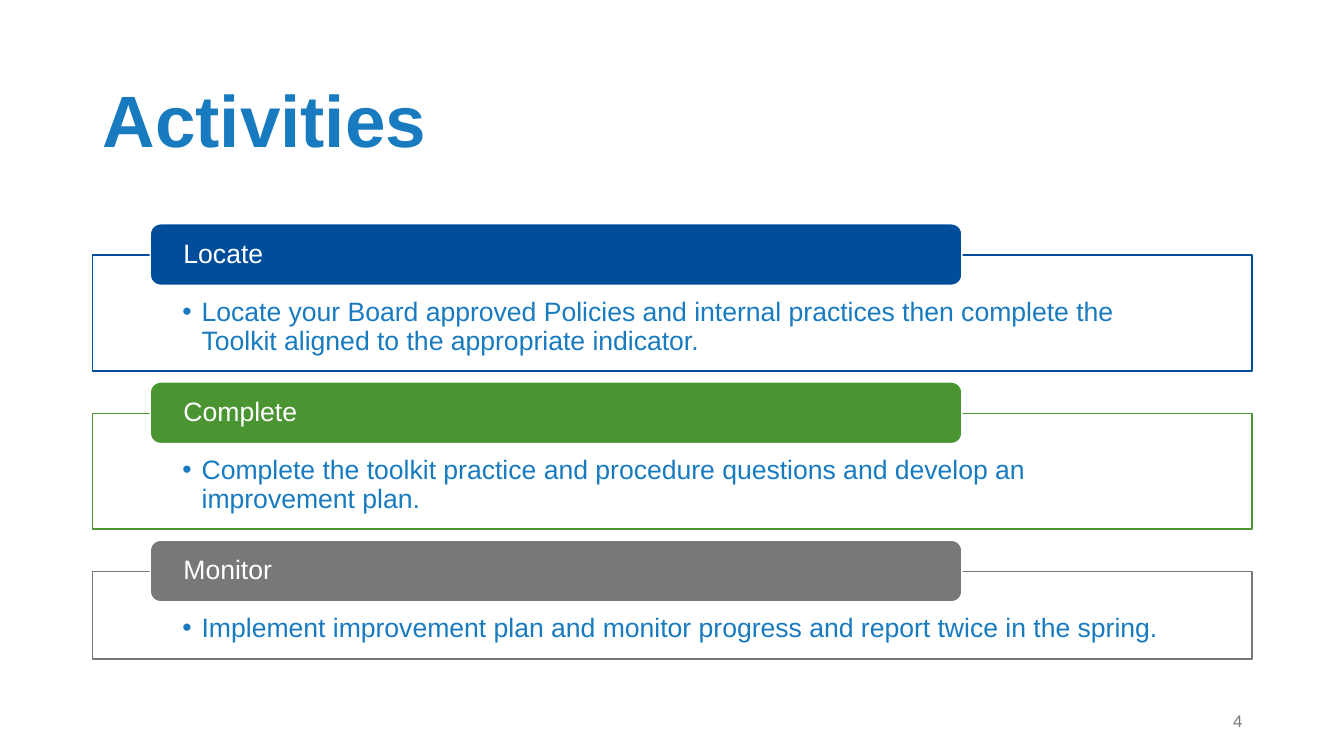
from lxml.etree import SubElement
from pptx import Presentation
from pptx.dml.color import RGBColor
from pptx.enum.shapes import MSO_SHAPE
from pptx.enum.text import MSO_ANCHOR, PP_ALIGN
from pptx.oxml.ns import qn
from pptx.util import Pt

PX = 9144  # EMU per px, 100 px to the inch
FONT = "Arial"
BLUE, GRAY, WHITE = "187BC0", "787878", "FFFFFF"

LEFT, WIDTH = 92, 1150
FIRST_TOP, GAP = 253, 42
BAR_LEFT, BAR_WIDTH, BAR_HEIGHT, BAR_RISE = 149, 805, 61, 31

# heading, detail, color, panel height
ACTIVITIES = [
    ("Locate",
     "Locate your Board approved Policies and internal practices "
     "then complete the Toolkit aligned to the appropriate indicator.",
     "004E9A", 115),
    ("Complete",
     "Complete the toolkit practice and procedure questions "
     "and develop an improvement plan.",
     "4A9431", 115),
    ("Monitor",
     "Implement improvement plan and monitor progress "
     "and report twice in the spring.",
     GRAY, 87),
]


def color(value):
    return RGBColor.from_string(value)


def px(*lengths):
    return [length * PX for length in lengths]


def set_text(sp, text, size, text_color, insets=(10, 5, 10, 5), bold=False,
             align=PP_ALIGN.LEFT, anchor=MSO_ANCHOR.MIDDLE, spacing=0.9):
    tf = sp.text_frame
    tf.word_wrap = True
    tf.vertical_anchor = anchor
    (tf.margin_left, tf.margin_top,
     tf.margin_right, tf.margin_bottom) = px(*insets)
    tf.text = text
    p = tf.paragraphs[0]
    p.alignment = align
    p.line_spacing = spacing
    font = p.runs[0].font
    font.name, font.size, font.bold = FONT, Pt(size), bold
    font.color.rgb = color(text_color)
    return p


def add_text(s, box, text, size, text_color, **options):
    set_text(s.shapes.add_textbox(*px(*box)), text, size, text_color, **options)


def add_box(s, kind, box, fill, line):
    sp = s.shapes.add_shape(kind, *px(*box))
    sp.shadow.inherit = False
    sp.fill.solid()
    sp.fill.fore_color.rgb = color(fill)
    sp.line.color.rgb = color(line)
    sp.line.width = Pt(1)
    return sp


def add_bullet(p, indent):
    pPr = p._p.get_or_add_pPr()
    pPr.set("marL", str(indent * PX))
    pPr.set("indent", str(-indent * PX))
    SubElement(pPr, qn("a:buFont"), typeface=FONT)
    SubElement(pPr, qn("a:buChar"), char="•")


def add_activity(s, top, heading, detail, accent, height):
    # Outlined panel with the bulleted detail
    panel = add_box(s, MSO_SHAPE.RECTANGLE, (LEFT, top, WIDTH, height),
                    WHITE, accent)
    p = set_text(panel, detail, 19, BLUE, insets=(89, 43, 89, 15),
                 anchor=MSO_ANCHOR.TOP)
    add_bullet(p, 19)

    # Heading bar across the panel's top edge
    bar = add_box(s, MSO_SHAPE.ROUNDED_RECTANGLE,
                  (BAR_LEFT, top - BAR_RISE, BAR_WIDTH, BAR_HEIGHT),
                  accent, WHITE)
    set_text(bar, heading, 19, WHITE, insets=(30, 0, 30, 0))


def main():
    prs = Presentation()
    prs.slide_width, prs.slide_height = px(1333, 750)
    s = prs.slides.add_slide(prs.slide_layouts[6])

    # Title
    add_text(s, (LEFT, 61, WIDTH, 124), "Activities", 52, BLUE, bold=True)

    # Slide number
    add_text(s, (942, 695, 300, 40), "4", 12, GRAY,
             align=PP_ALIGN.RIGHT, spacing=1.0)

    # Activities, stacked with equal gaps
    top = FIRST_TOP
    for heading, detail, accent, height in ACTIVITIES:
        add_activity(s, top, heading, detail, accent, height)
        top += height + GAP

    prs.save("out.pptx")


if __name__ == "__main__":
    main()
